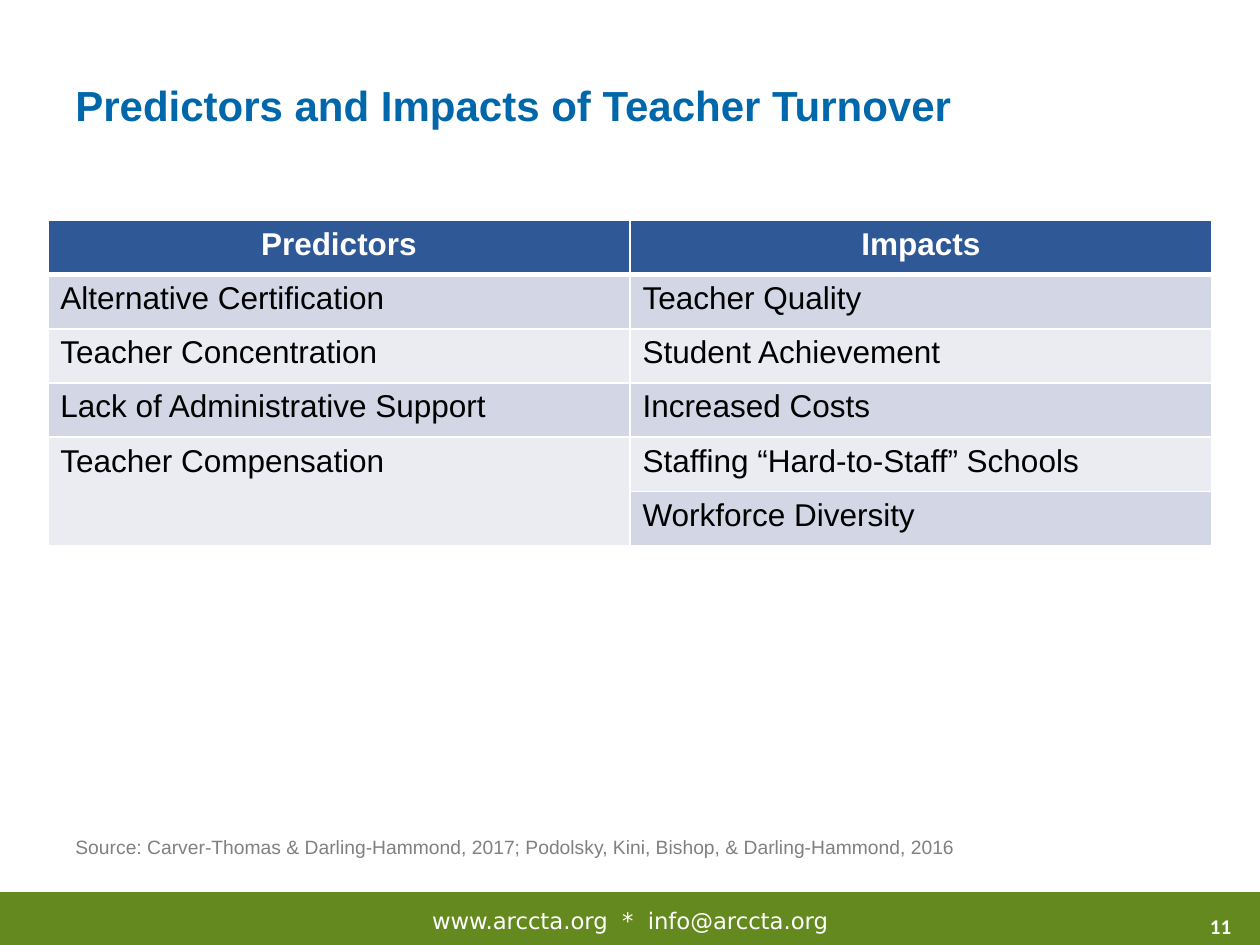
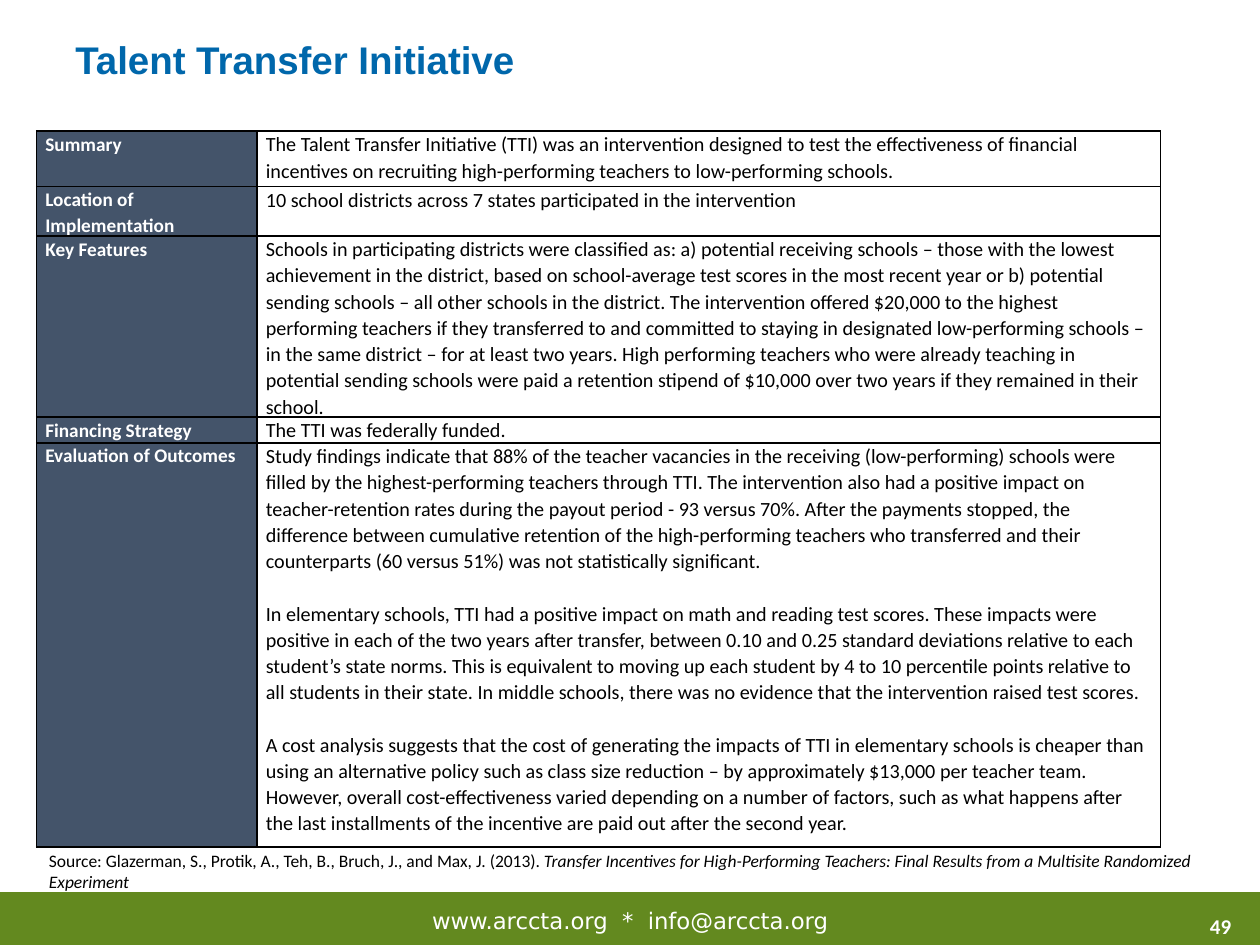
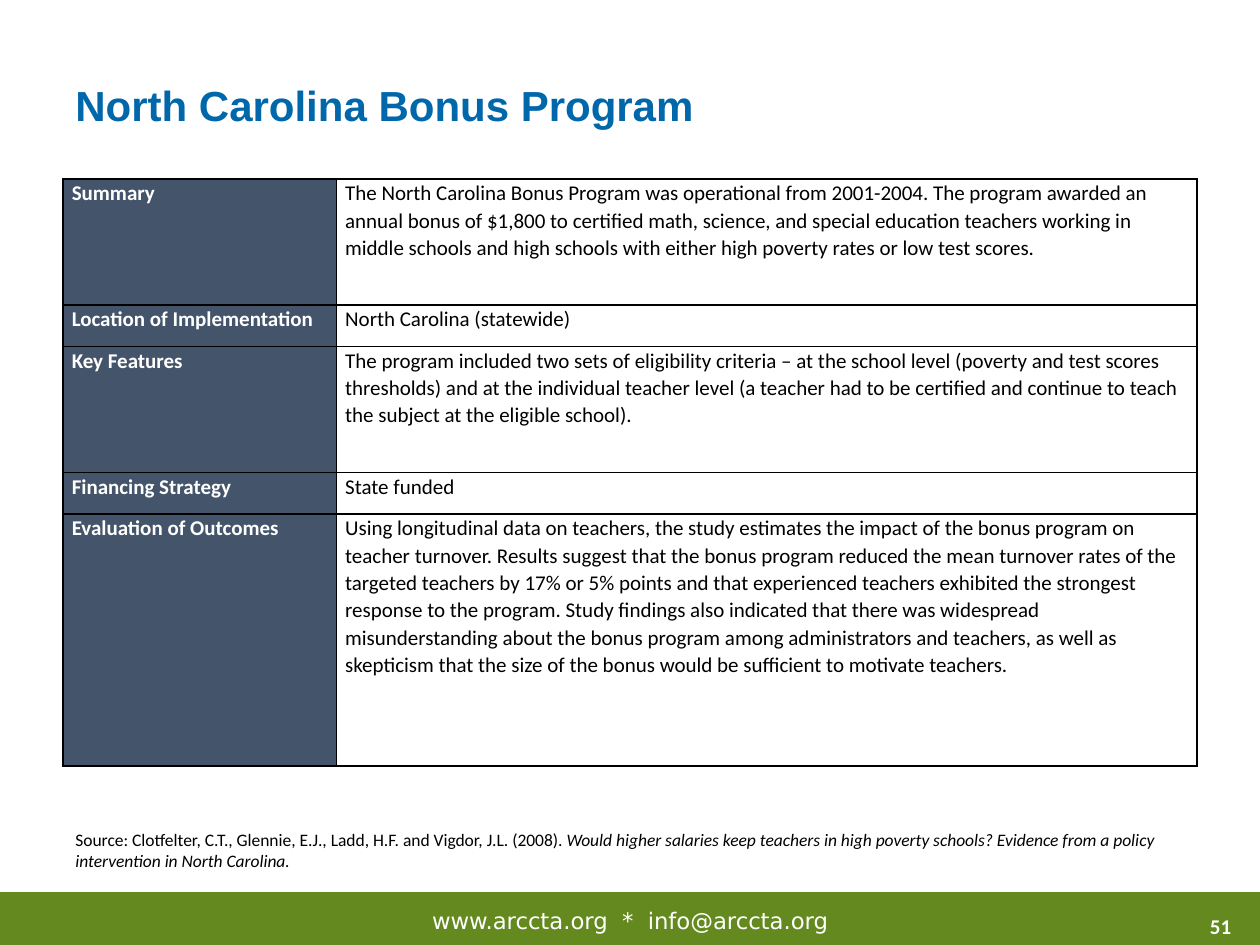
from dataclasses import dataclass
from typing import Optional

from lxml.etree import SubElement as Sub
from pptx import Presentation
from pptx.dml.color import RGBColor
from pptx.enum.shapes import MSO_SHAPE as Shape
from pptx.enum.text import MSO_ANCHOR as Anchor, PP_ALIGN as Align
from pptx.oxml.ns import qn
from pptx.util import Inches, Pt

# Shared look
WHITE, BLACK, GREY = "FFFFFF", "000000", "808080"
GREEN, BLUE, NAVY, SLATE = "63891F", "0067AB", "2F5897", "44546A"
BANDS = ("D2D6E5", "EAECF2")
TOPICS = ("Summary", "Location of Implementation", "Key Features",
          "Financing Strategy", "Evaluation of Outcomes")


@dataclass
class Box:
    left: float
    top: float
    width: float
    height: float

    def emu(self):
        return [Inches(n) for n in (self.left, self.top, self.width, self.height)]


@dataclass
class Run:
    text: str
    italic: bool = False
    space: Optional[int] = None  # extra width per letter, in 1/100 point


@dataclass
class Page:
    title: str
    number: int
    size: float
    head: Box
    source: list
    foot: Box
    font: str = "Calibri"
    points: float = 10
    color: str = BLACK


@dataclass
class Grid:
    left: float
    top: float
    cols: list
    rows: list


def rgb(code: str) -> RGBColor:
    return RGBColor.from_string(code)


def write(frame, text, *, size, font="Calibri", color=BLACK, bold=False,
          align=Align.LEFT, line=None, gap=0):
    """Fill a frame: each item is one paragraph, a string or a list of runs."""
    frame.word_wrap = True
    items = [text] if isinstance(text, str) else text
    for i, item in enumerate(items):
        para = frame.paragraphs[0] if i == 0 else frame.add_paragraph()
        para.alignment = align
        if line:
            para.line_spacing = line
        if i and gap:
            para.space_before = Pt(gap)
        for part in [Run(item)] if isinstance(item, str) else item:
            run = para.add_run()
            run.text = part.text
            face = run.font
            face.name, face.size, face.bold = font, Pt(size), bold
            face.italic = part.italic
            face.color.rgb = rgb(color)
            if part.space:
                face._element.set("spc", str(part.space))


def label(slide, box: Box, text, *, anchor=Anchor.TOP, **style):
    frame = slide.shapes.add_textbox(*box.emu()).text_frame
    frame.vertical_anchor = anchor
    write(frame, text, **style)


def edge(cell, color: str, **widths: float):
    """Draw the four borders; widths may override sides L, R, T and B."""
    for side in "LRTB":
        width = Pt(widths.get(side, 1))
        line = Sub(cell._tc.get_or_add_tcPr(), qn(f"a:ln{side}"), w=str(width))
        Sub(Sub(line, qn("a:solidFill")), qn("a:srgbClr"), val=color)


def paint(cell, color: Optional[str]):
    if color:
        cell.fill.solid()
        cell.fill.fore_color.rgb = rgb(color)
    else:
        cell.fill.background()


def lay(slide, grid: Grid):
    """Add an empty table with the given column widths and row heights."""
    box = Box(grid.left, grid.top, sum(grid.cols), sum(grid.rows))
    table = slide.shapes.add_table(len(grid.rows), len(grid.cols), *box.emu()).table
    table.first_row = table.horz_banding = False
    for col, width in zip(table.columns, grid.cols):
        col.width = Inches(width)
    for row, height in zip(table.rows, grid.rows):
        row.height = Inches(height)
    return table


def start(deck, page: Page):
    """Add a slide with its band, footer, title and source."""
    slide = deck.slides.add_slide(deck.slide_layouts[6])
    band = slide.shapes.add_shape(Shape.RECTANGLE, *Box(0, 7.08, 10, 0.42).emu())
    band.shadow.inherit = False
    band.fill.solid()
    band.fill.fore_color.rgb = rgb(GREEN)
    band.line.fill.background()
    label(slide, Box(9.13, 7.2, 0.74, 0.3), str(page.number),
          size=12, color=WHITE, bold=True, align=Align.RIGHT)
    wide = Run(" ", space=410)
    site = [Run("www.arccta.org"), wide, Run("*"), wide, Run("info@arccta.org")]
    label(slide, Box(0.5, 7.15, 9, 0.32), [site],
          size=13, font="DejaVu Sans", color=WHITE, align=Align.CENTER)
    label(slide, page.head, page.title, size=page.size, font="Arial",
          color=BLUE, bold=True, anchor=Anchor.BOTTOM)
    label(slide, page.foot, [page.source], size=page.points,
          font=page.font, color=page.color)
    return slide


def pairs(slide, grid: Grid, rows: list):
    """Two-column table with a dark head and banded rows."""
    table = lay(slide, grid)
    for r, row in enumerate(rows):
        for c, text in enumerate(row):
            cell = table.cell(r, c)
            head = r == 0
            edge(cell, WHITE, T=3 if r == 1 else 1, B=3 if head else 1)
            paint(cell, NAVY if head else BANDS[(r - 1) % 2])
            if text:
                write(cell.text_frame, text, size=18, font="Arial", bold=head,
                      color=WHITE if head else BLACK,
                      align=Align.CENTER if head else Align.LEFT)
    last = len(rows) - 1
    table.cell(last - 1, 0).merge(table.cell(last, 0))


def facts(slide, grid: Grid, notes: list, *, key: float, body: float):
    """Topic table: dark names on the left, notes on the right."""
    table = lay(slide, grid)
    for r, row in enumerate(zip(TOPICS, notes)):
        for c, text in enumerate(row):
            cell = table.cell(r, c)
            cell.margin_left = cell.margin_right = Inches(0.07)
            cell.margin_top = cell.margin_bottom = 0
            name = c == 0
            edge(cell, BLACK)
            paint(cell, SLATE if name else None)
            write(cell.text_frame, text, size=key if name else body, bold=name,
                  color=WHITE if name else BLACK, line=1.07, gap=15)


def main():
    deck = Presentation()
    deck.slide_width, deck.slide_height = Inches(10), Inches(7.5)
    high = Box(0.5, 0.3, 9, 0.78)

    # Predictors and impacts
    slide = start(deck, Page(
        "Predictors and Impacts of Teacher Turnover", 11, 24, high,
        [Run("Source: Carver-Thomas & Darling-Hammond, 2017; Podolsky, Kini, "
             "Bishop, & Darling-Hammond, 2016")],
        Box(0.5, 6.58, 8.25, 0.66), "Arial", 11, GREY))
    pairs(slide, Grid(0.38, 1.75, [4.62] * 2, [0.43] * 6), [
        ("Predictors", "Impacts"),
        ("Alternative Certification", "Teacher Quality"),
        ("Teacher Concentration", "Student Achievement"),
        ("Lack of Administrative Support", "Increased Costs"),
        ("Teacher Compensation", "Staffing “Hard-to-Staff” Schools"),
        ("", "Workforce Diversity"),
    ])

    # Talent transfer
    slide = start(deck, Page(
        "Talent Transfer Initiative", 49, 22, Box(0.5, 0.17, 9, 0.53),
        [Run("Source: Glazerman, S., Protik, A., Teh, B., Bruch, J., and Max, J. (2013). "),
         Run("Transfer Incentives for High-Performing Teachers: Final Results "
             "from a Multisite Randomized Experiment", italic=True)],
        Box(0.29, 6.7, 9.42, 0.44)))
    facts(slide, Grid(0.29, 1.04, [1.75, 7.17], [0.44, 0.38, 1.4, 0.19, 3.21]), [
        "The Talent Transfer Initiative (TTI) was an intervention designed to test "
        "the effectiveness of financial incentives on recruiting high-performing "
        "teachers to low-performing schools.",
        "10 school districts across 7 states participated in the intervention",
        "Schools in participating districts were classified as: a) potential "
        "receiving schools – those with the lowest achievement in the district, "
        "based on school-average test scores in the most recent year or b) potential "
        "sending schools – all other schools in the district. The intervention "
        "offered $20,000 to the highest performing teachers if they transferred to "
        "and committed to staying in designated low-performing schools – in the same "
        "district – for at least two years. High performing teachers who were already "
        "teaching in potential sending schools were paid a retention stipend of "
        "$10,000 over two years if they remained in their school.",
        "The TTI was federally funded.",
        ["Study findings indicate that 88% of the teacher vacancies in the receiving "
         "(low-performing) schools were filled by the highest-performing teachers "
         "through TTI. The intervention also had a positive impact on "
         "teacher-retention rates during the payout period - 93 versus 70%. After "
         "the payments stopped, the difference between cumulative retention of the "
         "high-performing teachers who transferred and their counterparts (60 versus "
         "51%) was not statistically significant.",
         "In elementary schools, TTI had a positive impact on math and reading test "
         "scores. These impacts were positive in each of the two years after "
         "transfer, between 0.10 and 0.25 standard deviations relative to each "
         "student’s state norms. This is equivalent to moving up each student by 4 "
         "to 10 percentile points relative to all students in their state. In middle "
         "schools, there was no evidence that the intervention raised test scores.",
         "A cost analysis suggests that the cost of generating the impacts of TTI in "
         "elementary schools is cheaper than using an alternative policy such as "
         "class size reduction – by approximately $13,000 per teacher team. However, "
         "overall cost-effectiveness varied depending on a number of factors, such "
         "as what happens after the last installments of the incentive are paid out "
         "after the second year."],
    ], key=11, body=11.5)

    # State bonus
    slide = start(deck, Page(
        "North Carolina Bonus Program", 51, 24, high,
        [Run("Source: Clotfelter, C.T., Glennie, E.J., Ladd, H.F. and Vigdor, J.L. (2008). "),
         Run("Would higher salaries keep teachers in high poverty schools? Evidence "
             "from a policy intervention in North Carolina.", italic=True)],
        Box(0.5, 6.53, 9.09, 0.44)))
    facts(slide, Grid(0.5, 1.42, [2.17, 6.83], [1, 0.33, 1, 0.33, 2]), [
        "The North Carolina Bonus Program was operational from 2001-2004. The program "
        "awarded an annual bonus of $1,800 to certified math, science, and special "
        "education teachers working in middle schools and high schools with either "
        "high poverty rates or low test scores.",
        "North Carolina (statewide)",
        "The program included two sets of eligibility criteria – at the school level "
        "(poverty and test scores thresholds) and at the individual teacher level (a "
        "teacher had to be certified and continue to teach the subject at the "
        "eligible school).",
        "State funded",
        "Using longitudinal data on teachers, the study estimates the impact of the "
        "bonus program on teacher turnover. Results suggest that the bonus program "
        "reduced the mean turnover rates of the targeted teachers by 17% or 5% points "
        "and that experienced teachers exhibited the strongest response to the "
        "program. Study findings also indicated that there was widespread "
        "misunderstanding about the bonus program among administrators and teachers, "
        "as well as skepticism that the size of the bonus would be sufficient to "
        "motivate teachers.",
    ], key=12, body=12)

    deck.save("out.pptx")


if __name__ == "__main__":
    main()
